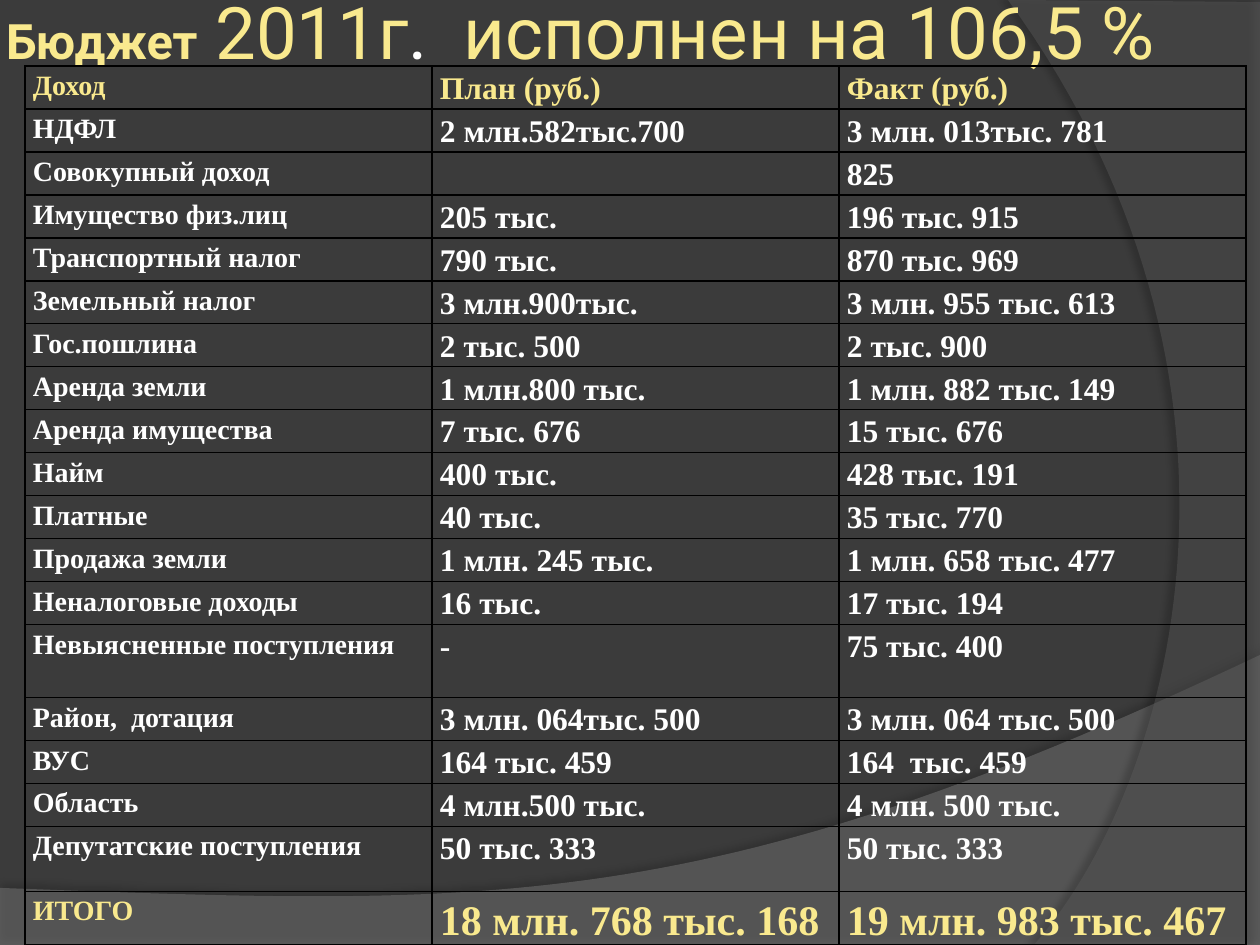
from lxml import etree
from pptx import Presentation
from pptx.dml.color import RGBColor
from pptx.enum.text import MSO_ANCHOR, MSO_AUTO_SIZE, PP_ALIGN
from pptx.oxml import parse_xml
from pptx.oxml.ns import nsdecls, qn
from pptx.util import Emu, Pt

EMU_PER_PX = 914400 / 126
MIDDLE, TOP = MSO_ANCHOR.MIDDLE, MSO_ANCHOR.TOP
NO_AUTOFIT = MSO_AUTO_SIZE.NONE
LEFT, JUSTIFY = PP_ALIGN.LEFT, PP_ALIGN.JUSTIFY

BACKGROUND = RGBColor(0x3B, 0x3B, 0x3B)
LOWER_WAVE = RGBColor(0x7F, 0x7F, 0x7F)
RIGHT_WAVE = RGBColor(0x5E, 0x5E, 0x5E)
YELLOW = RGBColor(0xF9, 0xE9, 0x8E)
WHITE = RGBColor(0xFF, 0xFF, 0xFF)

TITLE_RUNS = [
    ("Бюджет", 27.9, YELLOW, True),
    (" ", 41.4, WHITE, False),
    ("2011г", 41.4, YELLOW, False),
    (".  ", 41.4, WHITE, False),
    ("исполнен на 106,5 %", 41.4, YELLOW, False),
]
BUDGET = [
    ("Доход", "План (руб.)", "Факт (руб.)"),
    ("НДФЛ", "2 млн.582тыс.700", "3 млн. 013тыс. 781"),
    ("Совокупный доход", "", "825"),
    ("Имущество физ.лиц", "205 тыс.", "196 тыс. 915"),
    ("Транспортный налог", "790 тыс.", "870 тыс. 969"),
    ("Земельный налог", "3 млн.900тыс.", "3 млн. 955 тыс. 613"),
    ("Гос.пошлина", "2 тыс. 500", "2 тыс. 900"),
    ("Аренда земли", "1 млн.800 тыс.", "1 млн. 882 тыс. 149"),
    ("Аренда имущества", "7 тыс. 676", "15 тыс. 676"),
    ("Найм", "400 тыс.", "428 тыс. 191"),
    ("Платные", "40 тыс.", "35 тыс. 770"),
    ("Продажа земли", "1 млн. 245 тыс.", "1 млн. 658 тыс. 477"),
    ("Неналоговые доходы", "16 тыс.", "17 тыс. 194"),
    ("Невыясненные поступления", "-", "75 тыс. 400"),
    ("Район,  дотация", "3 млн. 064тыс. 500", "3 млн. 064 тыс. 500"),
    ("ВУС", "164 тыс. 459", "164  тыс. 459"),
    ("Область", "4 млн.500 тыс.", "4 млн. 500 тыс."),
    ("Депутатские поступления", "50 тыс. 333", "50 тыс. 333"),
    ("ИТОГО", "18 млн. 768 тыс. 168", "19 млн. 983 тыс. 467"),
]
LAST_ROW = len(BUDGET) - 1
COLUMN_WIDTH, ROW_HEIGHT = 407, 43
TALL_ROWS = {13: 73, 17: 65, LAST_ROW: 53}


def px(length):
    return Emu(round(length * EMU_PER_PX))


def bezier(start, control_1, control_2, end, steps=60):
    """Points along a cubic curve, both ends included."""
    points = []
    for step in range(steps + 1):
        t = step / steps
        weights = ((1 - t) ** 3, 3 * t * (1 - t) ** 2, 3 * t * t * (1 - t), t ** 3)
        points.append(tuple(
            sum(w * value for w, value in zip(weights, axis))
            for axis in zip(start, control_1, control_2, end)))
    return points


def add_wave(slide, points, color, opacity, shadow):
    """Translucent outline; shadow is (opacity, blur pt, distance pt, degrees)."""
    corners = [(px(x), px(y)) for x, y in points]
    builder = slide.shapes.build_freeform(*corners[0], scale=1.0)
    builder.add_line_segments(corners[1:], close=True)
    wave = builder.convert_to_shape()
    wave.fill.solid()
    wave.fill.fore_color.rgb = color
    wave.line.fill.background()
    fill_color = wave._element.spPr.find(qn("a:solidFill"))[0]
    etree.SubElement(fill_color, qn("a:alpha"), val=str(opacity * 1000))
    shade, blur, distance, angle = shadow
    wave._element.spPr.append(parse_xml(
        f'<a:effectLst {nsdecls("a")}><a:outerShdw blurRad="{Pt(blur)}" '
        f'dist="{Pt(distance)}" dir="{angle * 60000}" algn="ctr" rotWithShape="0">'
        f'<a:srgbClr val="000000"><a:alpha val="{shade * 1000}"/></a:srgbClr>'
        '</a:outerShdw></a:effectLst>'))


def format_title(slide):
    title = slide.shapes.title
    slide.shapes._spTree.append(title._element)  # in front of the waves
    title.left, title.top, title.width, title.height = px(0), px(16), px(1255), px(49)
    frame = title.text_frame
    frame.auto_size = NO_AUTOFIT
    frame.word_wrap = True
    frame.vertical_anchor = MIDDLE
    frame.margin_left = frame.margin_right = frame.margin_top = px(6)
    frame.margin_bottom = px(26)
    heading = frame.paragraphs[0]
    heading.alignment = LEFT
    heading.font.name = "Roboto"
    for text, size, color, bold in TITLE_RUNS:
        run = heading.add_run()
        run.text = text
        run.font.size = Pt(size)
        run.font.color.rgb = color
        run.font.bold = bold


def add_borders(cell):
    for side in ("lnL", "lnR", "lnT", "lnB"):
        cell._tc.get_or_add_tcPr().append(parse_xml(
            f'<a:{side} {nsdecls("a")} w="{Pt(1)}"><a:solidFill>'
            f'<a:srgbClr val="000000"/></a:solidFill></a:{side}>'))


def fill_cell(cell, text, size, color):
    add_borders(cell)
    cell.fill.background()
    cell.margin_left = cell.margin_right = px(8)
    cell.margin_top = cell.margin_bottom = 0
    cell.vertical_anchor = TOP
    cell.text = text
    entry = cell.text_frame.paragraphs[0]
    entry.alignment = JUSTIFY
    entry.line_spacing = 1.15
    entry.font.name = "Times New Roman"
    entry.font.size = Pt(size)
    entry.font.bold = True
    entry.font.color.rgb = color


def add_budget_table(slide):
    heights = [TALL_ROWS.get(row, ROW_HEIGHT) for row in range(len(BUDGET))]
    columns = len(BUDGET[0])
    table = slide.shapes.add_table(
        len(BUDGET), columns, px(25), px(66),
        px(COLUMN_WIDTH * columns), px(sum(heights))).table
    table.first_row = table.horz_banding = False
    for column in table.columns:
        column.width = px(COLUMN_WIDTH)
    for row, entries in enumerate(BUDGET):
        table.rows[row].height = px(heights[row])
        color = YELLOW if row in (0, LAST_ROW) else WHITE
        amount_size = 24 if row == LAST_ROW else 18
        for column, text in enumerate(entries):
            size = amount_size if column else 16
            fill_cell(table.cell(row, column), text, size, color)


def main():
    presentation = Presentation()
    presentation.slide_width, presentation.slide_height = px(1260), px(945)
    slide = presentation.slides.add_slide(presentation.slide_layouts[5])
    slide.background.fill.solid()
    slide.background.fill.fore_color.rgb = BACKGROUND

    lower_edge = bezier((1260, 655), (704, 919), (493, 906), (0, 888))
    add_wave(slide, [(0, 945), (1260, 945)] + lower_edge,
             LOWER_WAVE, 45, (35, 4, 3.5, 270))
    right_edge = bezier((1034, 945), (1178, 780), (1283, 378), (1008, 0))
    add_wave(slide, [(1260, 2), (1260, 945)] + right_edge,
             RIGHT_WAVE, 40, (45, 4, 4, 180))

    format_title(slide)
    add_budget_table(slide)
    presentation.save("out.pptx")


if __name__ == "__main__":
    main()
